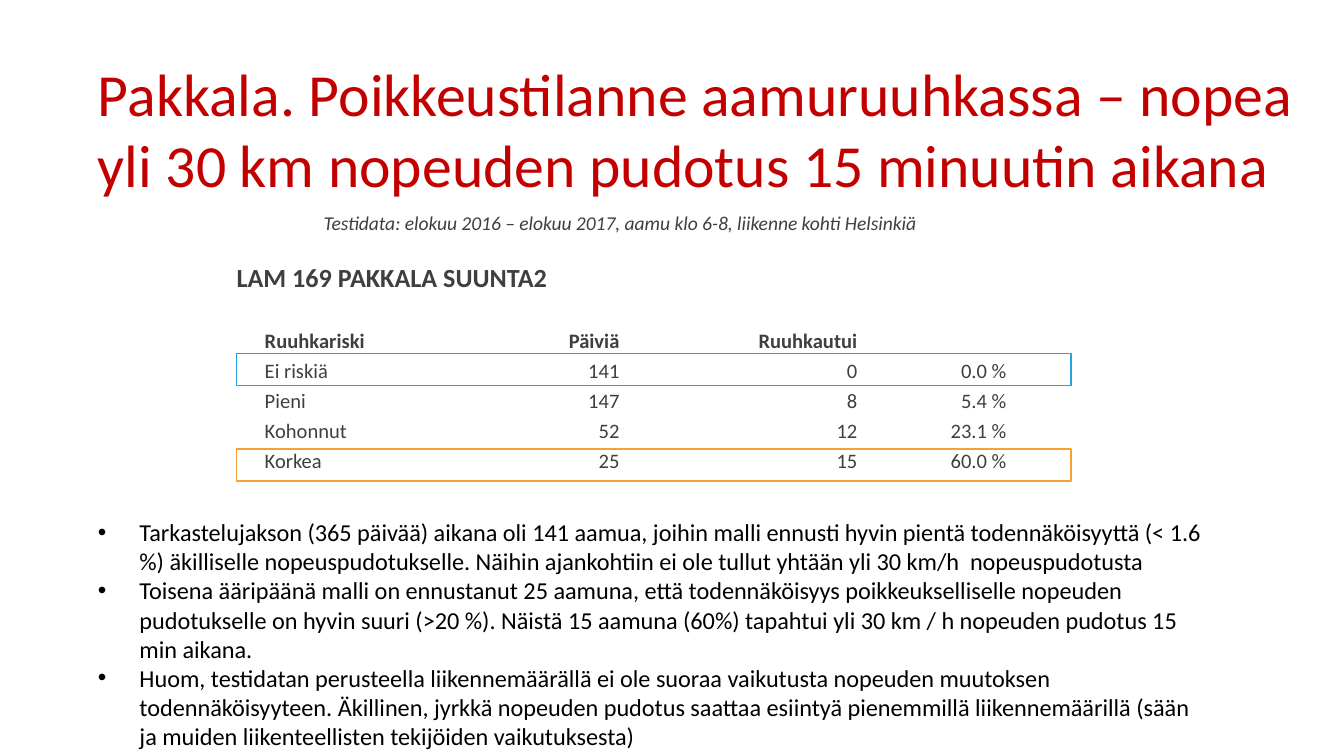
from lxml.etree import SubElement
from pptx import Presentation
from pptx.dml.color import RGBColor
from pptx.enum.shapes import MSO_SHAPE
from pptx.enum.text import MSO_ANCHOR, PP_ALIGN
from pptx.oxml.ns import qn
from pptx.util import Inches, Pt

FONT = "Calibri"
RED, GREY, BLACK = "C30000", "3F3F3F", "000000"
BLUE, ORANGE = "25A1DE", "F7A034"
LEFT = 0.63
INDENT = 0.31

TITLE = ("Pakkala. Poikkeustilanne aamuruuhkassa – nopea yli 30 km nopeuden "
         "pudotus 15 minuutin aikana")
SUBTITLE = "Testidata: elokuu 2016 – elokuu 2017, aamu klo 6-8, liikenne kohti Helsinkiä"
HEADING = "LAM 169 PAKKALA SUUNTA2"
HEADER = ["Ruuhkariski", "Päiviä", "Ruuhkautui", ""]
RISKS = [
    ["Ei riskiä", "141", "0", "0.0 %"],
    ["Pieni", "147", "8", "5.4 %"],
    ["Kohonnut", "52", "12", "23.1 %"],
    ["Korkea", "25", "15", "60.0 %"],
]
FINDINGS = [
    "Tarkastelujakson (365 päivää) aikana oli 141 aamua, joihin malli ennusti hyvin pientä "
    "todennäköisyyttä (< 1.6 %) äkilliselle nopeuspudotukselle. Näihin ajankohtiin ei ole "
    "tullut yhtään yli 30 km/h  nopeuspudotusta",
    "Toisena ääripäänä malli on ennustanut 25 aamuna, että todennäköisyys poikkeukselliselle "
    "nopeuden pudotukselle on hyvin suuri (>20 %). Näistä 15 aamuna (60%) tapahtui yli "
    "30 km / h nopeuden pudotus 15 min aikana.",
    "Huom, testidatan perusteella liikennemäärällä ei ole suoraa vaikutusta nopeuden muutoksen "
    "todennäköisyyteen. Äkillinen, jyrkkä nopeuden pudotus saattaa esiintyä pienemmillä "
    "liikennemäärillä (sään ja muiden liikenteellisten tekijöiden vaikutuksesta)",
]
COLUMNS = [0.21, 1.8, 0.94, 1.77, 1.11]
HEADING_ROW = 0.29


def rgb(value):
    return RGBColor.from_string(value)


def inches(box):
    return [Inches(v) for v in box]


def style(p, size, color, bold=False, italic=False):
    for r in p.runs:
        f = r.font
        f.name, f.size, f.bold, f.italic = FONT, Pt(size), bold, italic
        f.color.rgb = rgb(color)


def add_text(slide, box, lines, size, color, italic=False):
    tf = slide.shapes.add_textbox(*inches(box)).text_frame
    tf.word_wrap = True
    tf.text = "\n".join(lines)
    for p in tf.paragraphs:
        style(p, size, color, italic=italic)
    return tf


def add_title(slide, box):
    tf = add_text(slide, box, [TITLE], 32, RED)
    tf.paragraphs[0].line_spacing = Pt(38)


def add_findings(slide, box):
    tf = add_text(slide, box, FINDINGS, 13, BLACK)
    for p in tf.paragraphs:
        pPr = p._p.get_or_add_pPr()
        pPr.set("marL", str(Inches(INDENT)))
        pPr.set("indent", str(-Inches(INDENT)))
        SubElement(pPr, qn("a:buFont"), typeface="Arial")
        SubElement(pPr, qn("a:buChar"), char="•")


def fill_cell(cell, text, size, bold, align):
    cell.fill.background()
    cell.vertical_anchor = MSO_ANCHOR.BOTTOM
    cell.margin_left = cell.margin_right = Inches(0.05)
    cell.margin_top = cell.margin_bottom = 0
    p = cell.text_frame.paragraphs[0]
    p.text = text
    p.alignment = align
    style(p, size, GREY, bold)
    if not text:  # keeps an empty row from growing
        SubElement(p._p, qn("a:endParaRPr"), sz=str(size * 100))


def add_risk_table(slide, left, top, height):
    rows = [[HEADING] + [""] * 4, [""] * 5] + [[""] + row for row in [HEADER] + RISKS]
    row_height = (height - HEADING_ROW) / (len(rows) - 1)
    box = left, top, sum(COLUMNS), height
    table = slide.shapes.add_table(len(rows), len(COLUMNS), *inches(box)).table
    table.first_row = table.horz_banding = False
    for column, width in zip(table.columns, COLUMNS):
        column.width = Inches(width)
    for i, row in enumerate(rows):
        table.rows[i].height = Inches(row_height if i else HEADING_ROW)
        for j, text in enumerate(row):
            align = PP_ALIGN.RIGHT if j > 1 else PP_ALIGN.LEFT
            fill_cell(table.cell(i, j), text, 11 if i else 14, i < 3, align)
    table.cell(0, 0).merge(table.cell(0, 3))


def add_highlight(slide, box, color):
    sp = slide.shapes.add_shape(MSO_SHAPE.RECTANGLE, *inches(box))
    sp.shadow.inherit = False
    sp.fill.background()
    sp.line.color.rgb = rgb(color)
    sp.line.width = Pt(0.85)


def main():
    prs = Presentation()
    prs.slide_width = Inches(10)
    prs.slide_height = prs.slide_width * 9 // 16
    slide = prs.slides.add_slide(prs.slide_layouts[6])
    add_title(slide, (LEFT, 0.38, 9.18, 1.7))
    add_risk_table(slide, 1.71, 1.9, 1.63)
    add_text(slide, (2.31, 1.52, 5.81, 0.49), [SUBTITLE], 10.5, GREY, italic=True)
    add_findings(slide, (LEFT, 3.8, 8.46, 1.71))
    for top, color in [(2.63, BLUE), (3.34, ORANGE)]:
        add_highlight(slide, (1.76, top, 6.21, 0.24), color)
    prs.save("out.pptx")


if __name__ == "__main__":
    main()
